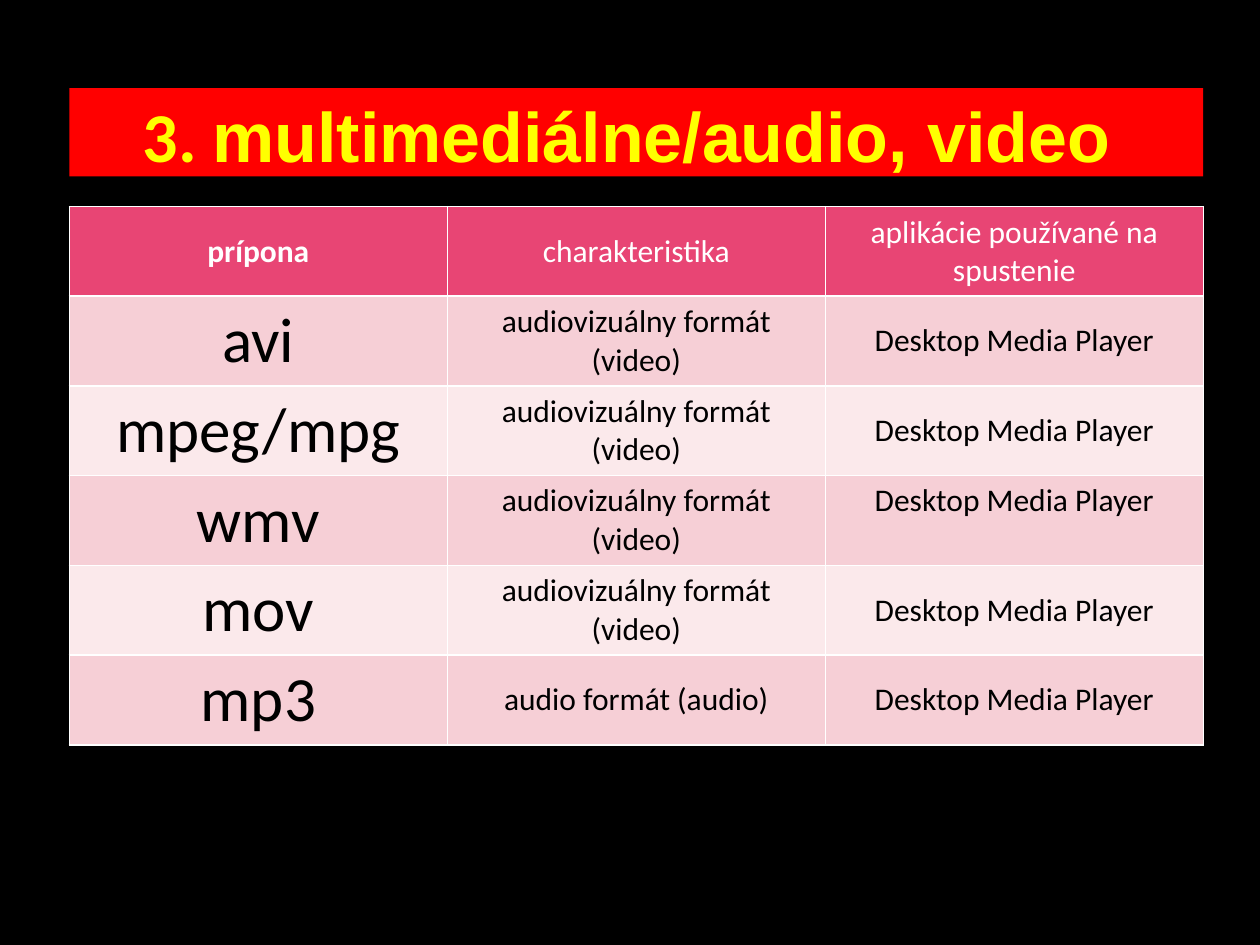
from dataclasses import dataclass

from lxml import etree
from pptx import Presentation
from pptx import util as u
from pptx.dml.color import RGBColor
from pptx.enum import shapes, text
from pptx.oxml import ns


@dataclass(frozen=True)
class Theme:
    back: str = "000000"
    bar: str = "FF0000"
    title: str = "FFFF00"
    head: str = "E84574"
    bands: tuple = ("F6CFD6", "FBE9EB")
    light: str = "FFFFFF"
    dark: str = "000000"
    font: str = "Calibri"
    accent: str = "Arial"
    big: int = 40
    mid: int = 36
    small: int = 18
    rule: int = 1


class Deck:
    """Holds the theme and the current slide; lengths are shares of the slide."""

    def __init__(self, theme, wide, high):
        self.theme = theme
        self.prs = Presentation()
        self.prs.slide_width = u.Inches(wide)
        self.prs.slide_height = u.Inches(high)
        self.slide = self.prs.slides.add_slide(self.prs.slide_layouts[6])
        self.paint(self.slide.background.fill, theme.back)

    def paint(self, fill, color):
        fill.solid()
        fill.fore_color.rgb = RGBColor.from_string(color)

    def box(self, x, y, w, h):
        wide, high = self.prs.slide_width, self.prs.slide_height
        return [u.Emu(round(v)) for v in (x * wide, y * high, w * wide, h * high)]

    def style(self, run, size, color, bold=False, font=None):
        run.font.name = font or self.theme.font
        run.font.size = u.Pt(size)
        run.font.bold = bold
        run.font.color.rgb = RGBColor.from_string(color)

    def banner(self, area, parts):
        look = self.theme
        bar = self.slide.shapes.add_shape(shapes.MSO_SHAPE.RECTANGLE, *self.box(*area))
        bar.shadow.inherit = False
        self.paint(bar.fill, look.bar)
        bar.line.fill.background()
        frame = bar.text_frame
        frame.word_wrap = True
        frame.vertical_anchor = text.MSO_ANCHOR.BOTTOM
        frame.margin_left = frame.margin_right = frame.margin_bottom = 0
        frame.margin_top = u.Inches(0.05)
        para = frame.paragraphs[0]
        para.alignment = text.PP_ALIGN.CENTER
        for words, font in parts:
            run = para.add_run()
            run.text = words
            self.style(run, look.big, look.title, True, font)

    def border(self, cell, side):
        props = cell._tc.get_or_add_tcPr()
        width = str(u.Pt(self.theme.rule))
        line = etree.SubElement(props, ns.qn(f"a:ln{side}"), w=width)
        fill = etree.SubElement(line, ns.qn("a:solidFill"))
        etree.SubElement(fill, ns.qn("a:srgbClr"), val=self.theme.light)

    def cell(self, cell, words, fill, size, color, bold, anchor):
        for side in "LRTB":
            self.border(cell, side)
        self.paint(cell.fill, fill)
        cell.vertical_anchor = anchor
        cell.text_frame.text = words
        para = cell.text_frame.paragraphs[0]
        para.alignment = text.PP_ALIGN.CENTER
        self.style(para.runs[0], size, color, bold)

    def table(self, area, rows, top=()):
        """Draw rows under a header; row numbers in top are anchored at the top."""
        look = self.theme
        grid = self.slide.shapes.add_table(len(rows), len(rows[0]), *self.box(*area)).table
        for r, row in enumerate(rows):
            head = r == 0
            fill = look.head if head else look.bands[(r - 1) % 2]
            color = look.light if head else look.dark
            anchor = text.MSO_ANCHOR.TOP if r in top else text.MSO_ANCHOR.MIDDLE
            for c, words in enumerate(row):
                first = c == 0
                size = look.mid if first and not head else look.small
                self.cell(grid.cell(r, c), words, fill, size, color,
                          head and first, anchor)


def main():
    look = Theme()
    deck = Deck(look, 10, 7.5)
    left, wide = 0.55 / 10, 9 / 10

    # Title bar
    deck.banner((left, 0.7 / 7.5, wide, 0.7 / 7.5),
                [("3. ", look.font), ("multimediálne/audio, video ", look.accent)])

    # File formats
    video, player = "audiovizuálny formát (video)", "Desktop Media Player"
    kinds = {"avi": video, "mpeg/mpg": video, "wmv": video, "mov": video,
             "mp3": "audio formát (audio)"}
    rows = [("prípona", "charakteristika", "aplikácie používané na spustenie")]
    rows += [(name, kind, player) for name, kind in kinds.items()]
    deck.table((left, 1.64 / 7.5, wide, 4.2 / 7.5), rows, top=(3,))

    deck.prs.save("out.pptx")


if __name__ == "__main__":
    main()
